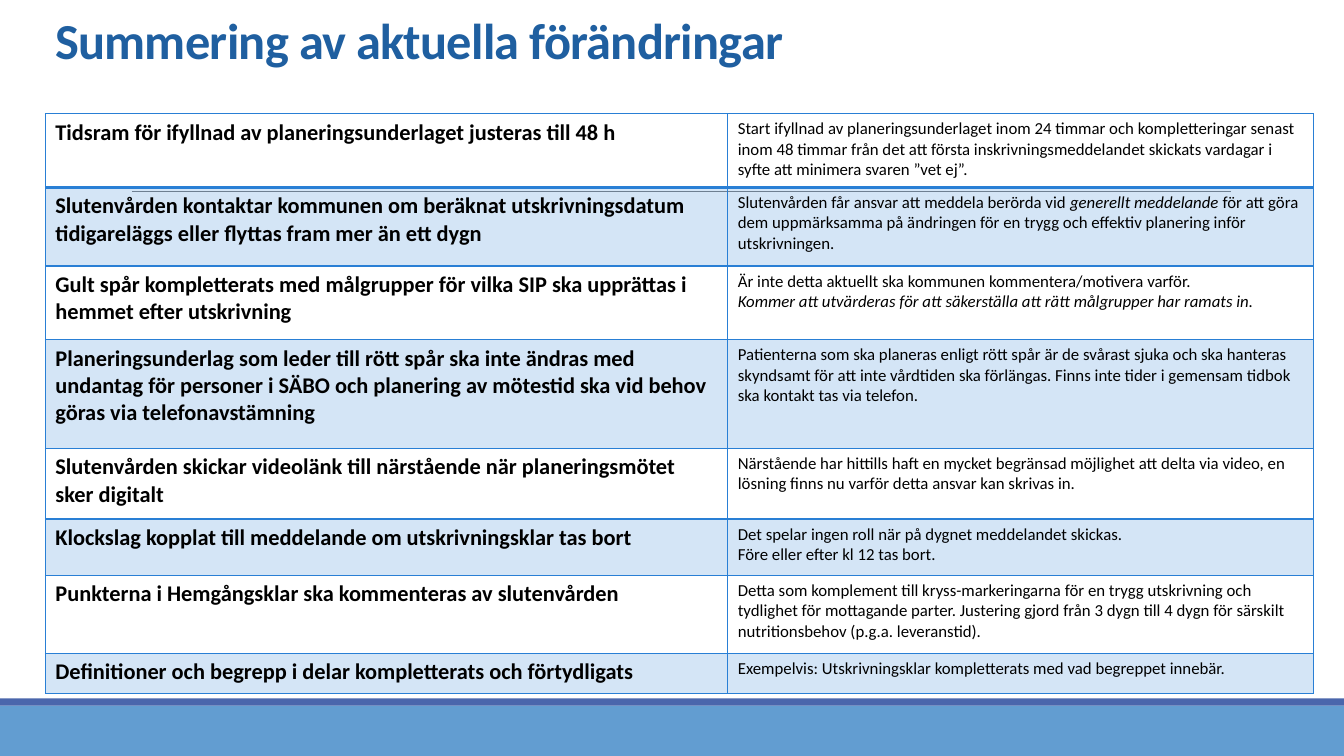
from lxml import etree
from pptx import Presentation, util as u
from pptx.dml.color import RGBColor
from pptx.enum import shapes, text
from pptx.oxml.ns import qn

COLORS = {"title": "1F5FA0", "text": "000000", "band": "629DD1", "stripe": "4A66AC",
          "rule": "808080", "table": "297FD5"}
COLS, ROWS = 160, 90  # grid units on the slide
TABLE_COLS = [81.24, 69.72]
CHANGES = [  # row height, change, explanation with *italic* parts
    (8.76, "Tidsram för ifyllnad av planeringsunderlaget justeras till 48 h",
     "Start ifyllnad av planeringsunderlaget inom 24 timmar och kompletteringar senast inom 48 timmar "
     "från det att första inskrivningsmeddelandet skickats vardagar i syfte att minimera svaren ”vet ej”."),
    (9.36, "Slutenvården kontaktar kommunen om beräknat utskrivningsdatum tidigareläggs eller flyttas "
     "fram mer än ett dygn",
     "Slutenvården får ansvar att meddela berörda vid *generellt meddelande *för att göra dem "
     "uppmärksamma på ändringen för en trygg och effektiv planering inför utskrivningen."),
    (8.76, "Gult spår kompletterats med målgrupper för vilka SIP ska upprättas i hemmet efter utskrivning",
     "Är inte detta aktuellt ska kommunen kommentera/motivera varför. \n"
     "*Kommer att utvärderas för att säkerställa att rätt målgrupper har ramats in.*"),
    (12.96, "Planeringsunderlag som leder till rött spår ska inte ändras med undantag för personer i SÄBO "
     "och planering av mötestid ska vid behov göras via telefonavstämning",
     "Patienterna som ska planeras enligt rött spår är de svårast sjuka och ska hanteras skyndsamt för "
     "att inte vårdtiden ska förlängas. Finns inte tider i gemensam tidbok ska kontakt tas via telefon."),
    (8.4, "Slutenvården skickar videolänk till närstående när planeringsmötet sker digitalt",
     "Närstående har hittills haft en mycket begränsad möjlighet att delta via video, en lösning finns "
     "nu varför detta ansvar kan skrivas in."),
    (6.72, "Klockslag kopplat till meddelande om utskrivningsklar tas bort",
     "Det spelar ingen roll när på dygnet meddelandet skickas. \nFöre eller efter kl 12 tas bort."),
    (9.24, "Punkterna i Hemgångsklar ska kommenteras av slutenvården",
     "Detta som komplement till kryss-markeringarna för en trygg utskrivning och tydlighet för "
     "mottagande parter. Justering gjord från 3 dygn till 4 dygn för särskilt nutritionsbehov "
     "(p.g.a. leveranstid)."),
    (4.8, "Definitioner och begrepp i delar kompletterats och förtydligats",
     "Exempelvis: Utskrivningsklar kompletterats med vad begreppet innebär."),
]


class Deck:
    font = "Calibri"

    def __init__(self):
        self.prs = Presentation()
        self.prs.slide_width, self.prs.slide_height = u.Inches(13.33), u.Inches(7.5)
        self.s = self.prs.slides.add_slide(self.prs.slide_layouts[6])

    def x(self, cols):
        return round(self.prs.slide_width * cols / COLS)

    def y(self, rows):
        return round(self.prs.slide_height * rows / ROWS)

    def box(self, left, top, width, height):
        return self.x(left), self.y(top), self.x(width), self.y(height)

    def color(self, name):
        return RGBColor.from_string(COLORS[name])

    def bar(self, top, height, color):
        sp = self.s.shapes.add_shape(shapes.MSO_SHAPE.RECTANGLE, *self.box(0, top, COLS, height))
        sp.shadow.inherit = False
        sp.fill.solid()
        sp.fill.fore_color.rgb = self.color(color)
        sp.line.fill.background()

    def rule(self, x1, x2, y):
        line = self.s.shapes.add_connector(shapes.MSO_CONNECTOR.STRAIGHT,
                                           self.x(x1), self.y(y), self.x(x2), self.y(y))
        line.line.color.rgb = self.color("rule")
        line.line.width = u.Pt(0.5)
        etree.SubElement(line._element.spPr, qn("a:effectLst"))

    def style(self, p, size, bold, color):
        f = p.font
        f.name, f.size, f.bold = self.font, u.Pt(size), bold
        f.color.rgb = self.color(color)

    def title(self, words, *place):
        tf = self.s.shapes.add_textbox(*self.box(*place)).text_frame
        tf.word_wrap = True
        tf.vertical_anchor = text.MSO_ANCHOR.BOTTOM
        p = tf.paragraphs[0]
        p.line_spacing = 0.85
        self.style(p, 36, True, "title")
        r = p.add_run()
        r.text = words
        r.font._element.set("spc", "-50")

    def add_marked(self, p, marked):
        """Add runs, with *...* in italics and newlines as line breaks."""
        for i, part in enumerate(marked.split("*")):
            for j, line in enumerate(part.split("\n")):
                if j:
                    p.add_line_break()
                if line:
                    r = p.add_run()
                    r.text = line
                    if i % 2:
                        r.font.italic = True

    def borders(self, cell, **widths):
        tc_pr = cell._tc.get_or_add_tcPr()
        for side in "LRTB":
            ln = etree.SubElement(tc_pr, qn(f"a:ln{side}"), w=str(int(u.Pt(widths.get(side, 1)))))
            fill = etree.SubElement(ln, qn("a:solidFill"))
            etree.SubElement(fill, qn("a:srgbClr"), val=COLORS["table"])

    def tint(self, cell, percent):
        cell.fill.solid()
        cell.fill.fore_color.rgb = self.color("table")
        clr = cell._tc.tcPr.find(qn("a:solidFill")).find(qn("a:srgbClr"))
        etree.SubElement(clr, qn("a:alpha"), val=str(percent * 1000))

    def table(self, left, top, widths, rows):
        place = self.box(left, top, sum(widths), sum(row[0] for row in rows))
        table = self.s.shapes.add_table(len(rows), len(widths), *place).table
        table.first_row = table.horz_banding = False
        for col, width in zip(table.columns, widths):
            col.width = self.x(width)
        for i, (height, *words) in enumerate(rows):
            table.rows[i].height = self.y(height)
            for j, marked in enumerate(words):
                cell = table.cell(i, j)
                p = cell.text_frame.paragraphs[0]
                self.style(p, 12 if j else 16, j == 0, "text")
                self.add_marked(p, marked)
                self.borders(cell, B=2 if i == 0 else 1, T=2 if i == 1 else 1)
                if i % 2:
                    self.tint(cell, 20)
                else:
                    cell.fill.background()


def main():
    deck = Deck()
    deck.bar(84, 6, "band")
    deck.bar(83.16, 0.84, "stripe")
    deck.rule(15.72, 146.52, 22.8)
    deck.title("Summering av aktuella förändringar", 5.4, 0.96, 132, 7.92)
    deck.table(5.4, 13.56, TABLE_COLS, CHANGES)
    deck.prs.save("out.pptx")


if __name__ == "__main__":
    main()
